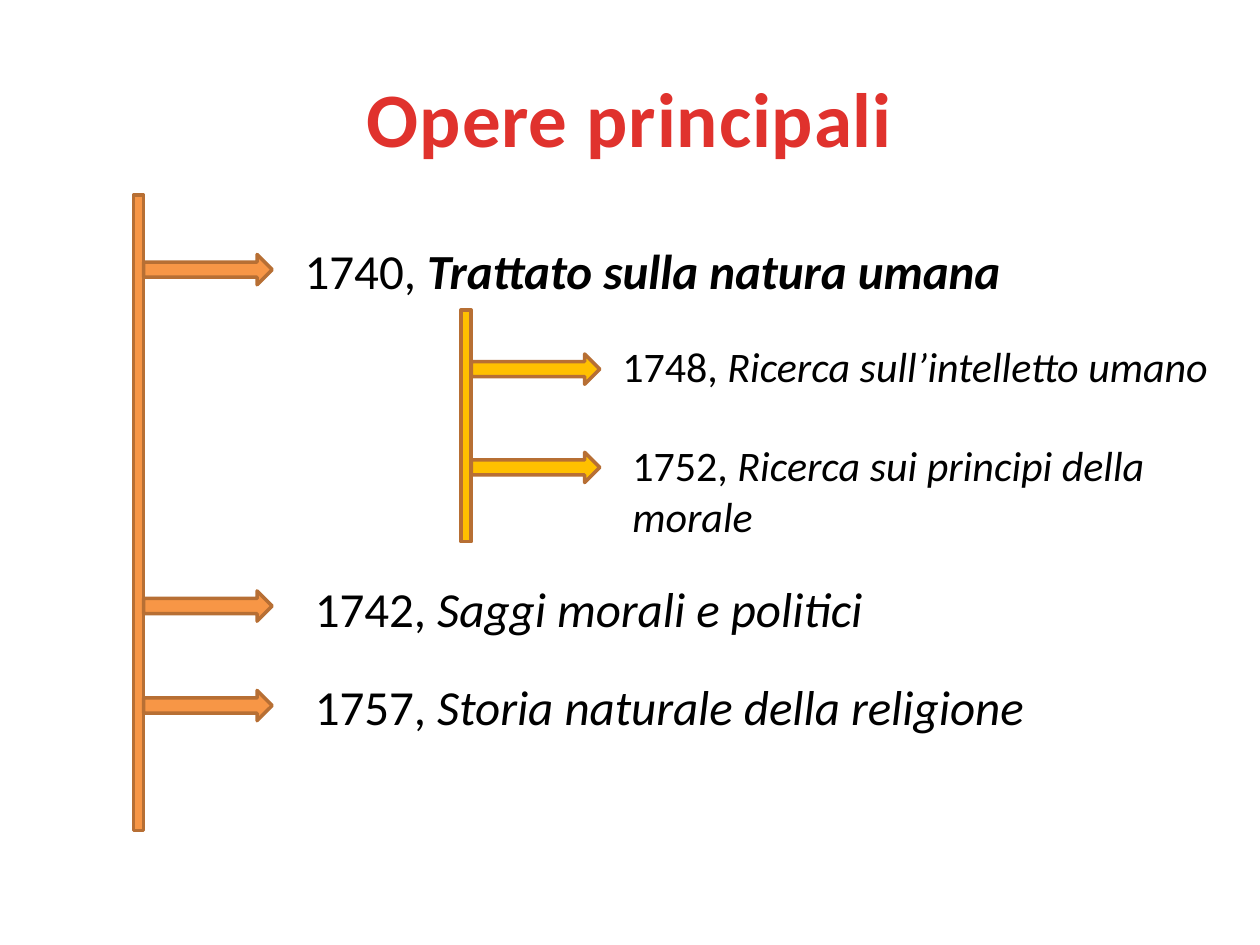
from dataclasses import dataclass

from pptx import Presentation
from pptx import util as u
from pptx.dml.color import RGBColor
from pptx.enum import shapes, text


@dataclass(frozen=True)
class Theme:
    font: str = "Calibri"
    title: str = "E0322D"
    ink: str = "000000"
    main: str = "F79646"
    branch: str = "FFC000"
    outline: str = "B76F34"
    title_size: int = 44
    main_size: int = 28
    branch_size: int = 24
    line_width: int = 2


def add_run(p, content, *, font, size, color, bold=False, italic=False, spacing=None):
    r = p.add_run()
    r.text = content
    r.font.name = font
    r.font.size = u.Pt(size)
    r.font.color.rgb = RGBColor.from_string(color)
    r.font.bold = bold
    r.font.italic = italic
    if spacing is not None:
        r.font._element.set("spc", str(int(spacing * 100)))
    return r


class Timeline:
    BAR_WIDTH = 0.08
    ARROW_WIDTH, ARROW_HEIGHT = 1.02, 0.24

    def __init__(self, slide, theme):
        self.slide = slide
        self.theme = theme

    def box(self, x, y, w, h, anchor=text.MSO_ANCHOR.TOP):
        sp = self.slide.shapes.add_textbox(*map(u.Inches, (x, y, w, h)))
        tf = sp.text_frame
        tf.word_wrap = True
        tf.vertical_anchor = anchor
        return tf.paragraphs[0]

    def title(self, content):
        t = self.theme
        p = self.box(0.5, 0.3, 9, 1.25, text.MSO_ANCHOR.MIDDLE)
        p.alignment = text.PP_ALIGN.CENTER
        add_run(p, content, font=t.font, size=t.title_size, color=t.title,
                bold=True, spacing=0.5)

    def shape(self, kind, x, y, w, h, fill):
        sp = self.slide.shapes.add_shape(kind, *map(u.Inches, (x, y, w, h)))
        sp.shadow.inherit = False
        sp.fill.solid()
        sp.fill.fore_color.rgb = RGBColor.from_string(fill)
        sp.line.color.rgb = RGBColor.from_string(self.theme.outline)
        sp.line.width = u.Pt(self.theme.line_width)

    def axis(self, x, y, h, fill, arrow_tops):
        """Draw a vertical bar with arrows leaving its right edge."""
        kinds = shapes.MSO_SHAPE
        self.shape(kinds.RECTANGLE, x, y, self.BAR_WIDTH, h, fill)
        for top in arrow_tops:
            self.shape(kinds.RIGHT_ARROW, x + self.BAR_WIDTH, top,
                       self.ARROW_WIDTH, self.ARROW_HEIGHT, fill)

    def work(self, x, y, w, h, year, name, size, bold=False):
        p = self.box(x, y, w, h)
        style = dict(font=self.theme.font, size=size, color=self.theme.ink)
        add_run(p, f"{year}, ", **style)
        add_run(p, name, italic=True, bold=bold, **style)


def main():
    prs = Presentation()
    prs.slide_width, prs.slide_height = u.Inches(10), u.Inches(7.5)
    theme = Theme()
    s = Timeline(prs.slides.add_slide(prs.slide_layouts[6]), theme)

    s.title("Opere principali")

    # Main axis and the branch of the first work
    s.axis(1.06, 1.55, 5.04, theme.main, (2.02, 4.69, 5.48))
    s.axis(3.66, 2.46, 1.84, theme.branch, (2.81, 3.59))

    # Works on the main axis
    for x, y, year, name, bold in (
        (2.32, 1.86, 1740, "Trattato sulla natura umana", True),
        (2.4, 4.54, 1742, "Saggi morali e politici", False),
        (2.4, 5.32, 1757, "Storia naturale della religione", False),
    ):
        s.work(x, y, 6.14, 0.57, year, name, theme.main_size, bold)

    # Works on the branch
    for x, y, h, year, name in (
        (4.84, 2.65, 0.5, 1748, "Ricerca sull’intelletto umano"),
        (4.92, 3.44, 0.91, 1752, "Ricerca sui principi della morale"),
    ):
        s.work(x, y, 4.88, h, year, name, theme.branch_size)

    prs.save("out.pptx")


if __name__ == "__main__":
    main()
